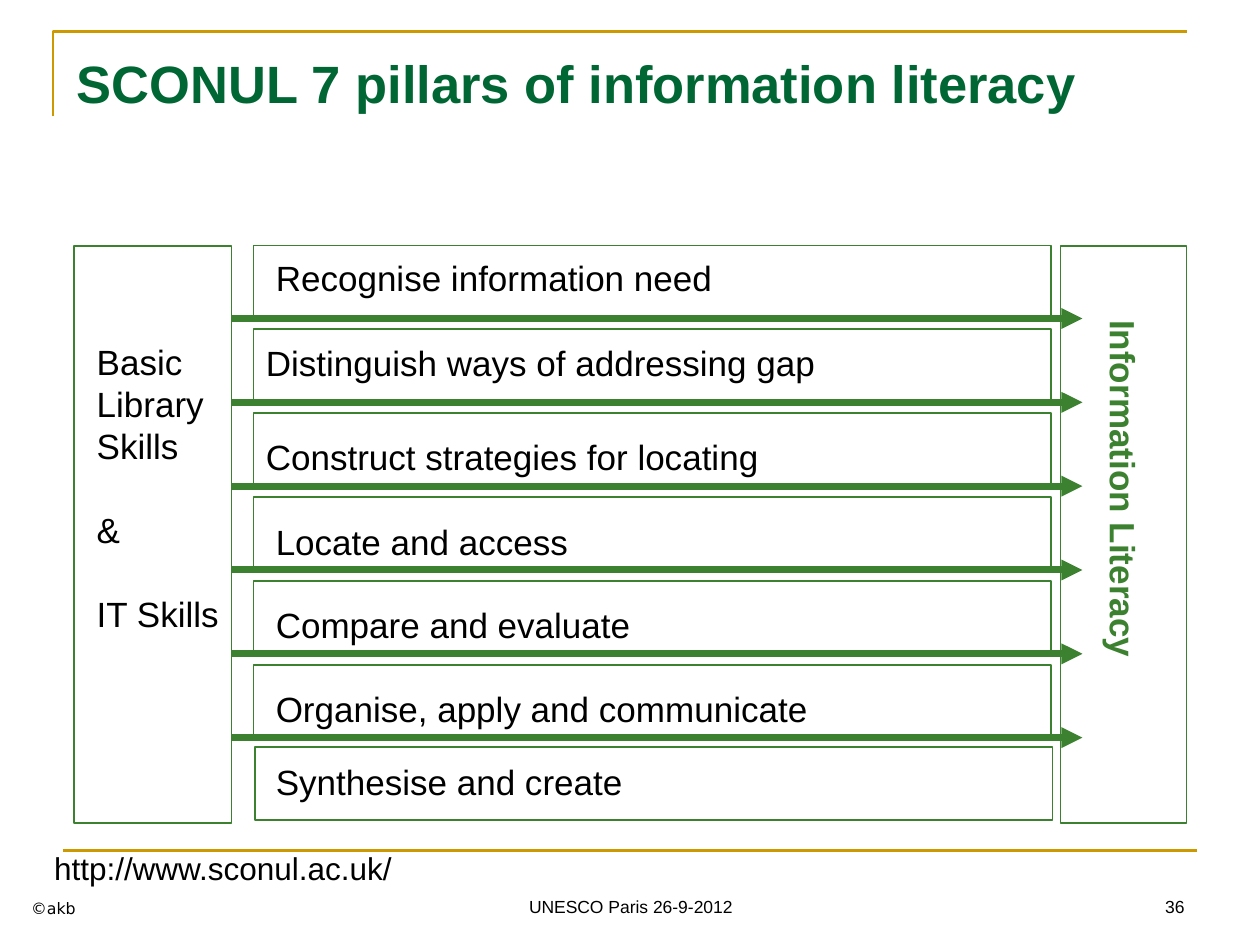
import dataclasses
import typing

import lxml.etree
import pptx
import pptx.dml.color
import pptx.enum.shapes
import pptx.enum.text
import pptx.oxml.ns
import pptx.util

Cm = pptx.util.Cm
Pt = pptx.util.Pt
ALIGN = pptx.enum.text.PP_ALIGN
ANCHOR = pptx.enum.text.MSO_ANCHOR
GREEN, GOLD, TITLE, BLACK = "3B812F", "CC9900", "006633", "000000"
ROW_TOP, ROW_PITCH, ROW_HEIGHT = 4.95, 1.69, 1.47


@dataclasses.dataclass
class Box:
    left: float
    top: float
    width: float
    height: float


@dataclasses.dataclass
class Label:
    paragraphs: list[str]
    box: Box
    size: float = 20
    color: str = BLACK
    bold: bool = False
    font: str = "Arial"
    align: typing.Any = ALIGN.LEFT
    anchor: typing.Any = ANCHOR.TOP
    rotation: float = 0
    line_spacing: typing.Any = None
    gap: float = 0


@dataclasses.dataclass
class Pillar:
    text: str
    text_left: float
    text_top: float
    box_left: float = 5.11
    box_top: float | None = None


def rgb(value: str) -> pptx.dml.color.RGBColor:
    return pptx.dml.color.RGBColor.from_string(value)


def set_attrs(obj: typing.Any, values: dict[str, typing.Any]) -> None:
    for name, value in values.items():
        setattr(obj, name, value)


def style_line(sp: typing.Any, color: str, width: float) -> None:
    sp.line.color.rgb = rgb(color)
    sp.line.width = Pt(width)


def lengths(box: Box) -> list[pptx.util.Length]:
    return [Cm(v) for v in dataclasses.astuple(box)]


def add_frame(s: typing.Any, box: Box) -> None:
    sp = s.shapes.add_shape(pptx.enum.shapes.MSO_SHAPE.RECTANGLE, *lengths(box))
    sp.shadow.inherit = False
    sp.fill.background()
    style_line(sp, GREEN, 1)


def add_line(s: typing.Any, left: float, right: float, y: float,
             color: str, width: float, arrow: bool = False) -> None:
    sp = s.shapes.add_connector(pptx.enum.shapes.MSO_CONNECTOR.STRAIGHT,
                                Cm(left), Cm(y), Cm(right), Cm(y))
    style_line(sp, color, width)
    qn = pptx.oxml.ns.qn
    if arrow:
        ln = sp.line._get_or_add_ln()
        lxml.etree.SubElement(ln, qn("a:tailEnd"), type="triangle")
    lxml.etree.SubElement(sp._element.spPr, qn("a:effectLst"))


def add_corner(s: typing.Any, left: float, top: float, right: float, bottom: float) -> None:
    builder = s.shapes.build_freeform(Cm(left), Cm(bottom))
    builder.add_line_segments([(Cm(left), Cm(top)), (Cm(right), Cm(top))], close=False)
    sp = builder.convert_to_shape()
    sp.shadow.inherit = False
    sp.fill.background()
    style_line(sp, GOLD, 1.5)


def add_label(s: typing.Any, label: Label) -> None:
    sp = s.shapes.add_textbox(*lengths(label.box))
    sp.rotation = label.rotation
    tf = sp.text_frame
    set_attrs(tf, {"word_wrap": True, "vertical_anchor": label.anchor})
    for i, text in enumerate(label.paragraphs):
        p = tf.add_paragraph() if i else tf.paragraphs[0]
        set_attrs(p, {"alignment": label.align, "line_spacing": label.line_spacing,
                      "space_before": Pt(label.gap if i else 0)})
        r = p.add_run()
        r.text = text
        set_attrs(r.font, {"name": label.font, "size": Pt(label.size), "bold": label.bold})
        r.font.color.rgb = rgb(label.color)


PILLARS = [
    Pillar("Recognise information need", 5.31, 5.05),
    Pillar("Distinguish ways of addressing gap", 5.11, 6.76),
    Pillar("Construct strategies for locating", 5.11, 8.66),
    Pillar("Locate and access", 5.31, 10.36),
    Pillar("Compare and evaluate", 5.31, 12.04),
    Pillar("Organise, apply and communicate", 5.31, 13.74),
    Pillar("Synthesise and create", 5.31, 15.21, box_left=5.14, box_top=15.06),
]

LABELS = [
    Label(["SCONUL 7 pillars of information literacy"], Box(1.3, 0.91, 22.22, 2.11),
          size=30, color=TITLE, bold=True),
    Label(["Information Literacy"], Box(18.29, 10.03, 8.74, 1.09),
          color=GREEN, bold=True, rotation=90),
    Label(["Basic Library Skills", "&", "IT Skills"], Box(1.7, 6.73, 3.18, 7.04),
          line_spacing=Pt(24), gap=24),
    Label(["http://www.sconul.ac.uk/"], Box(0.84, 16.99, 8.71, 1.02), size=18),
    Label(["©akb"], Box(0.38, 17.35, 5.92, 1.27), size=9, font="DejaVu Sans",
          anchor=ANCHOR.BOTTOM),
    Label(["UNESCO Paris 26-9-2012"], Box(8.69, 17.35, 8.05, 1.27), size=10,
          align=ALIGN.CENTER, anchor=ANCHOR.BOTTOM),
    Label(["36"], Box(18.21, 17.35, 5.92, 1.27), size=10,
          align=ALIGN.RIGHT, anchor=ANCHOR.BOTTOM),
]


def main() -> None:
    prs = pptx.Presentation()
    set_attrs(prs, {"slide_width": Cm(25.4), "slide_height": Cm(19.05)})
    s = prs.slides.add_slide(prs.slide_layouts[6])

    add_corner(s, 1.07, 0.64, 23.93, 2.34)
    add_line(s, 1.27, 24.13, 17.15, GOLD, 1.5)
    add_frame(s, Box(1.49, 4.96, 3.18, 11.63))
    add_frame(s, Box(21.38, 4.96, 2.54, 11.63))
    for i, pillar in enumerate(PILLARS):
        top = pillar.box_top or ROW_TOP + i * ROW_PITCH
        add_frame(s, Box(pillar.box_left, top, 16.08, ROW_HEIGHT))
        add_label(s, Label([pillar.text], Box(pillar.text_left, pillar.text_top, 13, 1.09)))
    for i in range(len(PILLARS) - 1):
        y = ROW_TOP + ROW_HEIGHT + i * ROW_PITCH
        add_line(s, 4.67, 21.82, y, GREEN, 4, arrow=True)
    for label in LABELS:
        add_label(s, label)

    prs.save("out.pptx")


if __name__ == "__main__":
    main()
